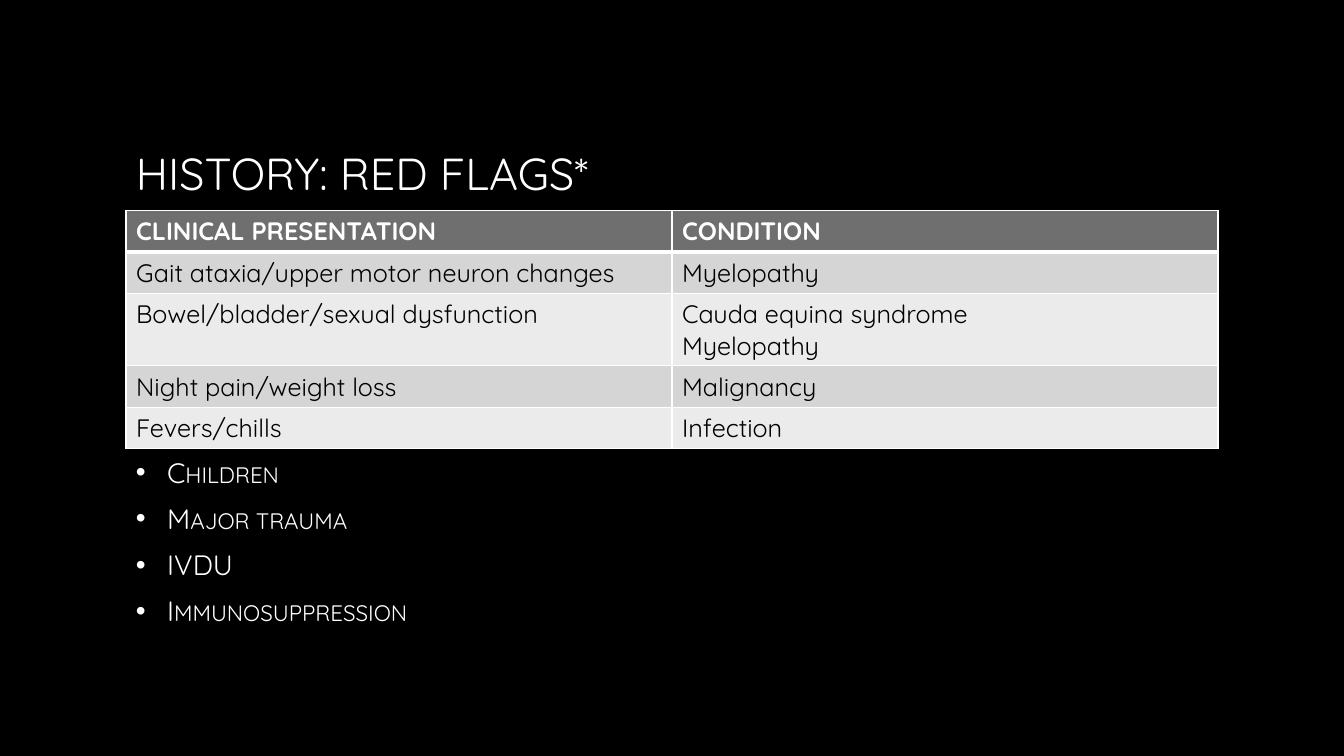
"""Build the slide on red flags in the patient history."""
from lxml import etree
from pptx import Presentation
from pptx.dml.color import RGBColor
from pptx.enum import text
from pptx.oxml import ns
from pptx.util import Inches, Pt

FONT = "Quicksand"
BLACK = RGBColor(0x00, 0x00, 0x00)
WHITE = RGBColor(0xFF, 0xFF, 0xFF)
HEADER_GREY = RGBColor(0x6F, 0x6F, 0x6F)
BAND_GREYS = [RGBColor(0xEB, 0xEB, 0xEB), RGBColor(0xD5, 0xD5, 0xD5)]
LEFT, WIDTH = Inches(1.25), Inches(10.83)

ROWS = [
    ("CLINICAL PRESENTATION", "CONDITION"),
    ("Gait ataxia/upper motor neuron changes", "Myelopathy"),
    ("Bowel/bladder/sexual dysfunction", "Cauda equina syndrome\nMyelopathy"),
    ("Night pain/weight loss", "Malignancy"),
    ("Fevers/chills", "Infection"),
]
RISK_GROUPS = ["Children", "Major trauma", "IVDU", "Immunosuppression"]


def style(paragraph, size, color, bold=False):
    font = paragraph.font
    font.name, font.size, font.bold = FONT, Pt(size), bold
    font.color.rgb = color


def add_text_frame(top, height):
    frame = slide.shapes.add_textbox(LEFT, top, WIDTH, height).text_frame
    frame.word_wrap = True
    frame.vertical_anchor = text.MSO_ANCHOR.MIDDLE
    return frame


presentation = Presentation()
presentation.slide_width, presentation.slide_height = Inches(13.33), Inches(7.5)
slide = presentation.slides.add_slide(presentation.slide_layouts[6])
slide.background.fill.solid()
slide.background.fill.fore_color.rgb = BLACK

title = add_text_frame(Inches(0.67), Inches(2.08)).paragraphs[0]
title.text = "HISTORY: RED FLAGS*"
style(title, 32, WHITE)

risk_frame = add_text_frame(Inches(4.41), Inches(1.92))
risk_frame.text = "\n".join(RISK_GROUPS)
for paragraph in risk_frame.paragraphs:
    paragraph.space_before, paragraph.space_after = Pt(3), Pt(6)
    properties = paragraph._p.get_or_add_pPr()
    properties.set("marL", str(Inches(0.31)))
    properties.set("indent", str(-Inches(0.31)))
    bullet_color = etree.SubElement(properties, ns.qn("a:buClr"))
    etree.SubElement(bullet_color, ns.qn("a:srgbClr"), val=str(WHITE))
    etree.SubElement(properties, ns.qn("a:buFont"), typeface="Arial")
    etree.SubElement(properties, ns.qn("a:buChar"), char="•")
    style(paragraph, 20, WHITE)
    paragraph.runs[0]._r.get_or_add_rPr().set("cap", "small")

table = slide.shapes.add_table(len(ROWS), 2, LEFT, Inches(2.09), WIDTH, Inches(2.32)).table
for row_index, values in enumerate(ROWS):
    header = row_index == 0
    table.rows[row_index].height = Inches(0.72 if "\n" in values[1] else 0.41)
    for column_index, value in enumerate(values):
        cell = table.cell(row_index, column_index)
        cell.text = value
        for paragraph in cell.text_frame.paragraphs:
            style(paragraph, 18, WHITE if header else BLACK, header)
        cell_properties = cell._tc.get_or_add_tcPr()
        for side in ("lnL", "lnR", "lnT", "lnB"):
            thick = (header and side == "lnB") or (row_index == 1 and side == "lnT")
            border = etree.SubElement(cell_properties, ns.qn(f"a:{side}"), w=str(Pt(3 if thick else 1)))
            border_fill = etree.SubElement(border, ns.qn("a:solidFill"))
            etree.SubElement(border_fill, ns.qn("a:srgbClr"), val=str(WHITE))
        cell.fill.solid()
        cell.fill.fore_color.rgb = HEADER_GREY if header else BAND_GREYS[row_index % 2]

presentation.save("out.pptx")
